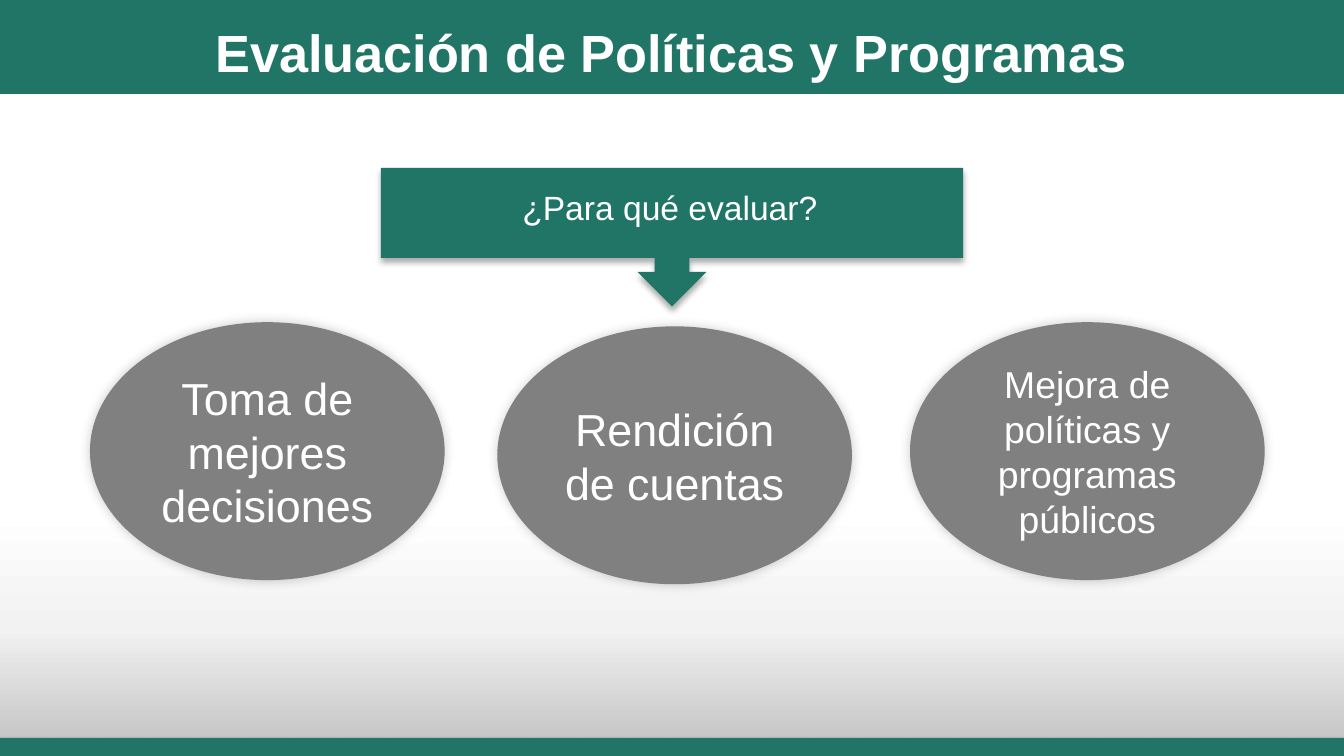
from copy import deepcopy

from lxml import etree
from pptx import Presentation
from pptx.dml.color import RGBColor
from pptx.enum.shapes import MSO_SHAPE as Shape
from pptx.enum.text import MSO_ANCHOR as Anchor, PP_ALIGN as Align
from pptx.oxml.ns import qn
from pptx.util import Pt

COLORS = {"green": "217567", "gray": "808080", "white": "FFFFFF",
          "light": "F2F2F2", "silver": "BFBFBF", "black": "000000"}
FONT = "Arial"


def rgb(name):
    return RGBColor.from_string(COLORS[name])


class SlideBuilder:
    def __init__(self, slide):
        self.slide = slide

    def shape(self, kind, left, top, width, height, color, shadow=None):
        shape = self.slide.shapes.add_shape(
            kind, Pt(left), Pt(top), Pt(width), Pt(height))
        shape.shadow.inherit = False
        shape.fill.solid()
        shape.fill.fore_color.rgb = rgb(color)
        shape.line.fill.background()
        if shadow:
            self.add_shadow(shape, *shadow)
        return shape

    def add_shadow(self, shape, opacity, blur, distance, angle):
        effects = shape._element.spPr.find(qn("a:effectLst"))
        outer = etree.SubElement(
            effects, qn("a:outerShdw"), blurRad=str(Pt(blur)),
            dist=str(Pt(distance)), dir=str(angle * 60000), rotWithShape="0")
        color = etree.SubElement(outer, qn("a:srgbClr"), val=COLORS["black"])
        etree.SubElement(color, qn("a:alpha"), val=str(opacity * 1000))

    def gradient(self, left, top, width, height, stops):
        shape = self.shape(Shape.RECTANGLE, left, top, width, height, "white")
        shape.fill.gradient()
        shape.fill.gradient_angle = 270
        stop_list = shape._element.spPr.find(".//" + qn("a:gsLst"))
        while len(stop_list) < len(stops):
            stop_list.append(deepcopy(stop_list[0]))
        for stop, (position, color) in zip(shape.fill.gradient_stops, stops):
            stop.position = position
            stop.color.rgb = rgb(color)

    def set_text(self, box, text, size, bold=False, anchor=Anchor.MIDDLE):
        frame = box.text_frame
        frame.word_wrap = True
        frame.vertical_anchor = anchor
        frame.text = text
        para = frame.paragraphs[0]
        para.alignment = Align.CENTER
        font = para.runs[0].font
        font.name, font.size, font.bold = FONT, Pt(size), bold
        font.color.rgb = rgb("white")

    def text(self, left, top, width, height, text, size, **style):
        box = self.slide.shapes.add_textbox(
            Pt(left), Pt(top), Pt(width), Pt(height))
        self.set_text(box, text, size, **style)

    def ellipse(self, left, top, text, size):
        shape = self.shape(Shape.OVAL, left, top, 190, 138.2, "gray",
                           shadow=(20, 6, 0, 225))
        self.set_text(shape, text, size)


def main():
    deck = Presentation()
    deck.slide_width, deck.slide_height = Pt(720), Pt(405)
    page = SlideBuilder(deck.slides.add_slide(deck.slide_layouts[6]))

    # Background, header and footer bands
    page.gradient(0, 140, 720, 265,
                  [(0.5, "white"), (0.74, "light"), (1, "silver")])
    page.shape(Shape.RECTANGLE, 0, 0, 720, 50.4, "green")
    page.shape(Shape.RECTANGLE, -3, 395.3, 726, 10, "green",
               shadow=(35, 3.1, 1.8, 90))

    # Title
    page.text(10.8, 2.9, 697, 49.7, "Evaluación de Políticas y Programas",
              28, bold=True)

    # Question in the arrow callout
    page.shape(Shape.DOWN_ARROW_CALLOUT, 204, 89.9, 312, 74.3, "green",
               shadow=(32, 3.5, 2.2, 90))
    page.text(235.4, 96.5, 247, 29, "¿Para qué evaluar?", 18,
              anchor=Anchor.TOP)

    # Reasons to evaluate
    for left, top, reason, size in (
            (48.2, 172.6, "Toma de mejores decisiones", 24),
            (487.5, 172.6, "Mejora de políticas y programas públicos", 20),
            (266.4, 174.8, "Rendición de cuentas", 24)):
        page.ellipse(left, top, reason, size)

    deck.save("out.pptx")


if __name__ == "__main__":
    main()
